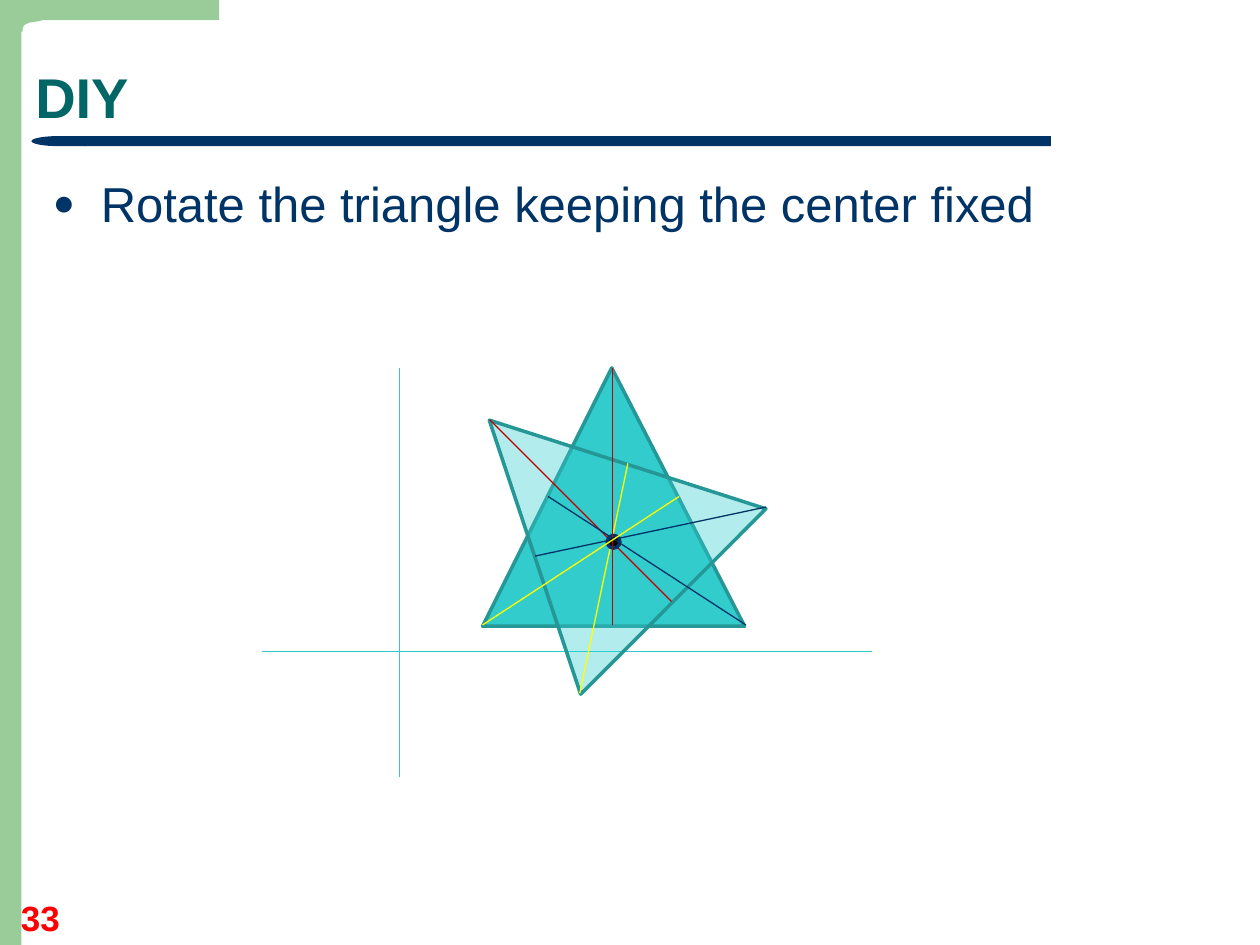
from math import cos, radians, sin

from lxml.etree import SubElement
from pptx import Presentation
from pptx.dml.color import RGBColor
from pptx.enum.shapes import MSO_CONNECTOR, MSO_SHAPE as SHAPE
from pptx.enum.text import MSO_ANCHOR as ANCHOR, PP_ALIGN as ALIGN
from pptx.oxml import parse_xml
from pptx.oxml.ns import nsdecls, qn
from pptx.util import Inches, Pt

GREEN, NAVY, AQUA, TEAL = "99CC99", "003366", "33CCCC", "269797"

TITLE = "DIY"
TASK = "Rotate the triangle keeping the center fixed"
PAGE = "33"
TITLE_FONT = dict(name="Arial", size=Pt(32), bold=True)
TASK_FONT = dict(name="Arial", size=Pt(28), bold=False)
PAGE_FONT = dict(name="Arial", size=Pt(20), bold=True)

CORNER = [(0, 0), (1.74, 0), (1.74, 0.16), (0.34, 0.16), (0.3, 0.17),
          (0.23, 0.18), (0.19, 0.2), (0.18, 0.23), (0.18, 0.25), (0, 0.25)]
AXES = [((3.17, 6.17), (3.17, 2.92)), ((2.08, 5.17), (6.92, 5.17))]
TRIANGLE_BOX = (3.83, 2.92, 2.08, 2.05)
CENTER = (4.87, 4.3)
DOT_SIZE = 0.1
TURN = -45
MEDIANS = [
    ((4.86, 2.92), (4.86, 4.96), "C00000"),
    ((4.35, 3.94), (5.92, 4.96), NAVY),
    ((5.39, 3.94), (3.83, 4.96), "FFFF00"),
]

prs = Presentation()
prs.slide_width, prs.slide_height = Inches(10), Inches(7.5)
slide = prs.slides.add_slide(prs.slide_layouts[1])
shapes = slide.shapes


def color(hex_code):
    return RGBColor.from_string(hex_code)


def paint(shape, fill, line=None, width=2):
    shape.shadow.inherit = False
    shape.fill.solid()
    shape.fill.fore_color.rgb = color(fill)
    if line:
        shape.line.color.rgb = color(line)
        shape.line.width = Pt(width)
    else:
        shape.line.fill.background()
    return shape


def add_preset(kind, box, fill, line=None):
    return paint(shapes.add_shape(kind, *map(Inches, box)), fill, line)


def add_line(start, end, hex_code):
    line = shapes.add_connector(MSO_CONNECTOR.STRAIGHT, *map(Inches, start + end))
    line.line.color.rgb = color(hex_code)
    line.line.width = Pt(0.75)
    SubElement(line._element.spPr, qn("a:effectLst"))


def place(shape, box):
    for side, value in zip(("left", "top", "width", "height"), box):
        setattr(shape, side, Inches(value))


def write(shape, text, font, hex_code, anchor, align):
    frame = shape.text_frame
    frame.word_wrap = True
    frame.vertical_anchor = anchor
    frame.text = text
    paragraph = frame.paragraphs[0]
    paragraph.alignment = align
    for key, value in font.items():
        setattr(paragraph.runs[0].font, key, value)
    paragraph.runs[0].font.color.rgb = color(hex_code)
    return paragraph


def turned(point):
    """Rotate a point about the triangle's center."""
    dx, dy = point[0] - CENTER[0], point[1] - CENTER[1]
    c, s = cos(radians(TURN)), sin(radians(TURN))
    return CENTER[0] + dx * c - dy * s, CENTER[1] + dx * s + dy * c


def add_triangle(box):
    triangle = add_preset(SHAPE.ISOSCELES_TRIANGLE, box, AQUA, TEAL)
    triangle.adjustments[0] = 0.493
    return triangle


# Frame and title rule
add_preset(SHAPE.RECTANGLE, (0, 0, 0.17, 7.5), GREEN)
builder = shapes.build_freeform(*map(Inches, CORNER[0]))
builder.add_line_segments([tuple(map(Inches, point)) for point in CORNER[1:]])
paint(builder.convert_to_shape(), GREEN)
add_preset(SHAPE.RECTANGLE, (0.67, 1.08, 7.67, 0.08), NAVY)
rule_tip = add_preset(SHAPE.FLOWCHART_DELAY, (0.25, 1.08, 0.43, 0.08), NAVY)
rule_tip._element.spPr.xfrm.set("flipH", "1")

# Title, task and page number
title, body = shapes.title, slide.placeholders[1]
place(title, (0.18, 0.17, 9.66, 0.92))
heading = write(title, TITLE, TITLE_FONT, "006666", ANCHOR.BOTTOM, ALIGN.LEFT)
heading.line_spacing = 0.9

place(body, (0.32, 1.29, 9.5, 1.46))
body.text_frame.margin_top = Inches(0.09)
task = write(body, TASK, TASK_FONT, NAVY, ANCHOR.TOP, ALIGN.LEFT)
task.space_before = Pt(0)
task_props = task._p.get_or_add_pPr()
task_props.set("marL", str(Inches(0.38)))
task_props.set("indent", str(Inches(-0.38)))
for bullet in (f'<a:buClr {nsdecls("a")}><a:srgbClr val="{NAVY}"/></a:buClr>',
               f'<a:buSzPct {nsdecls("a")} val="75000"/>',
               f'<a:buFont {nsdecls("a")} typeface="Arial"/>',
               f'<a:buChar {nsdecls("a")} char="●"/>'):
    task_props.append(parse_xml(bullet))

page_number = shapes.add_textbox(*map(Inches, (0, 7.16, 0.64, 0.34)))
write(page_number, PAGE, PAGE_FONT, "FF0000", ANCHOR.BOTTOM, ALIGN.CENTER)

# Axes and both triangles
for start, end in AXES:
    add_line(start, end, "2ECBCB")
add_triangle(TRIANGLE_BOX)

left, top, width, height = TRIANGLE_BOX
middle_x, middle_y = turned((left + width / 2, top + height / 2))
rotated = add_triangle((middle_x - width / 2, middle_y - height / 2, width, height))
rotated.rotation = TURN
fill_color = rotated._element.spPr.find(qn("a:solidFill"))[0]
SubElement(fill_color, qn("a:alpha"), val="37000")

# Medians of the rotated triangle, the fixed center, medians of the upright one
for start, end, hex_code in MEDIANS:
    add_line(turned(start), turned(end), hex_code)
add_preset(SHAPE.OVAL, (CENTER[0] - DOT_SIZE / 2, CENTER[1] - DOT_SIZE / 2,
                        DOT_SIZE, DOT_SIZE), "000000", NAVY)
for start, end, hex_code in MEDIANS:
    add_line(start, end, hex_code)

prs.save("out.pptx")
